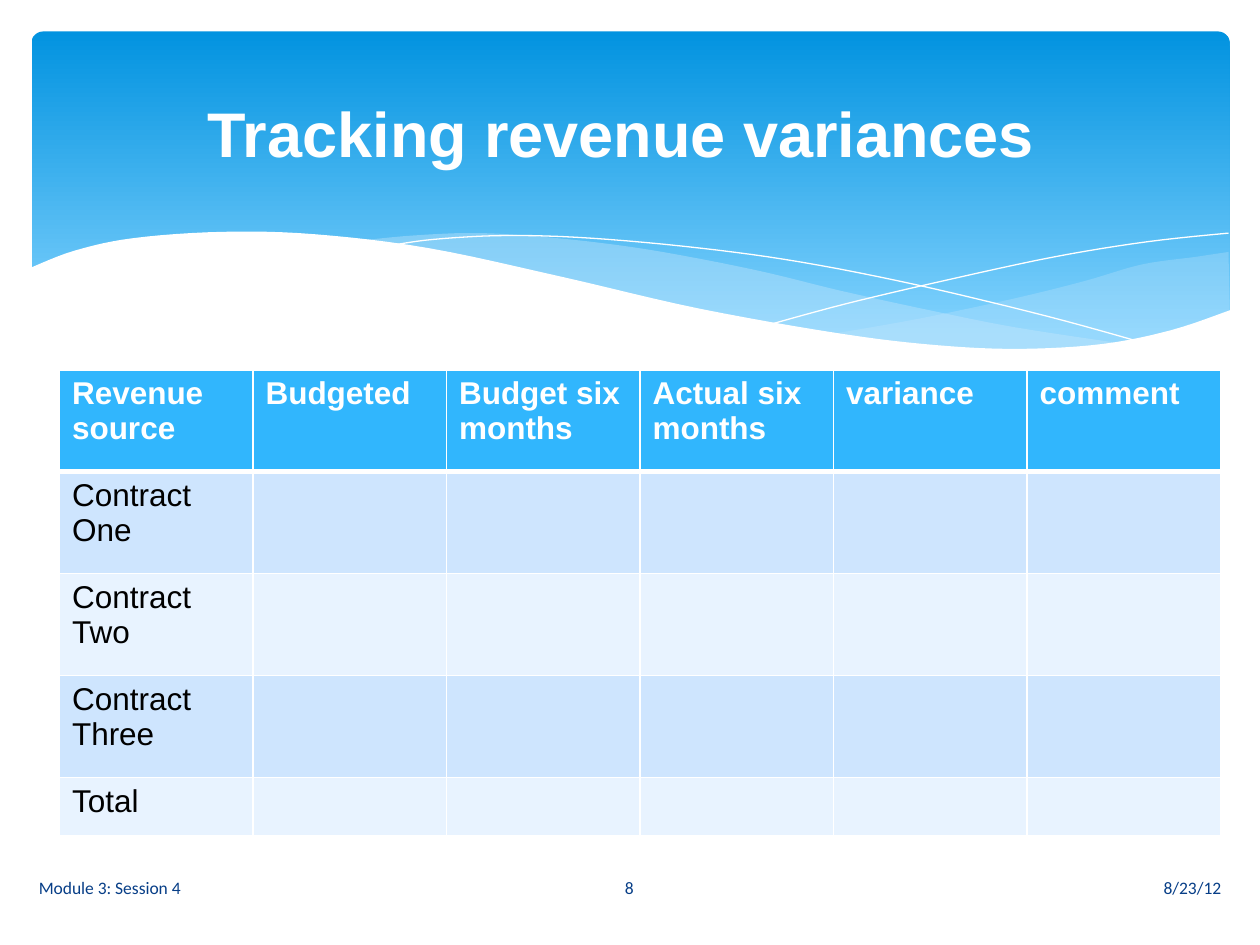
from dataclasses import dataclass
from typing import NamedTuple, Optional

from lxml.etree import SubElement
from pptx import Presentation
from pptx.dml.color import RGBColor
from pptx.enum.shapes import MSO_SHAPE
from pptx.enum.text import MSO_ANCHOR, MSO_AUTO_SIZE, PP_ALIGN
from pptx.oxml.ns import qn
from pptx.util import Pt


@dataclass(frozen=True)
class Theme:
    white: str = "FFFFFF"
    black: str = "000000"
    banner_top: str = "0293E0"
    banner_bottom: str = "83D3FE"
    wave: str = "C6E7FC"
    header: str = "31B6FD"
    bands: tuple = ("CEE5FE", "E8F3FF")
    footer: str = "073E87"
    body_font: str = "Arial"
    footer_font: str = "Calibri"
    title_size: int = 36
    table_size: int = 18
    footer_size: int = 10


class Wave(NamedTuple):
    """Smooth edges joined end to end; without a fill it is a thin white line."""
    edges: list
    fill: Optional[str] = None
    opacity: int = 100


class Footer(NamedTuple):
    text: str
    left: float
    width: float
    alignment: PP_ALIGN


THEME = Theme()
WAVES = [
    Wave([[(702, 144), (682.6, 146.9), (652.3, 151.2), (619.9, 160.6), (579.6, 170.6),
           (524.9, 182.2), (475.9, 190.8)],
          [(475.9, 190.8), (517.7, 195.8), (562.3, 199.4), (601.2, 199.4), (640.1, 195.8),
           (673.2, 188.6), (702.7, 177.8)]], THEME.wave, 29),
    Wave([[(205.9, 137.5), (236.2, 134.6), (273.6, 133.2), (318.2, 136.1), (370.1, 142.6),
           (430.6, 154.1), (481, 166.3), (533.5, 177.8), (581, 187.2), (643, 196.6)],
          [(643, 196.6), (610.6, 199.4), (565.2, 200.2), (510.5, 195.8), (456.5, 187.9),
           (381.6, 172.8), (323.3, 159.8), (260.6, 146.2), (205.9, 137.5)]], THEME.wave, 40),
    Wave([[(222.5, 140.4), (247.7, 136.8), (288.7, 134.6), (337.7, 136.1), (400.3, 141.8),
           (457.9, 149.8), (523.4, 162.7), (598.3, 180.7), (653, 195.8)]]),
    Wave([[(441.4, 185), (483.8, 173.5), (538.6, 160.6), (601.9, 146.9), (655.2, 138.2),
           (702, 133.2)]]),
    Wave([[(16.6, 153.4), (42.5, 143.3), (76.3, 136.1), (127.4, 132.5), (180, 133.9),
           (244.8, 141.8), (321.8, 158.4), (399.6, 176.4), (481, 190.8), (535.7, 197.3),
           (582.5, 199.4), (630, 196.6), (669.6, 188.6), (703.4, 177.1)],
          [(703.4, 236.9), (16.6, 236.9)]], THEME.white),
]
TABLE_ROWS = [
    ["Revenue source", "Budgeted", "Budget six months", "Actual six months", "variance", "comment"],
    ["Contract One"],
    ["Contract Two"],
    ["Contract Three"],
    ["Total"],
]
ROW_HEIGHTS = [58.3] * 4 + [33.4]
COLUMN_WIDTH = 110.6
FOOTERS = [
    Footer("8/23/12", 406.8, 298.1, PP_ALIGN.RIGHT),
    Footer("Module 3: Session 4", 15.1, 298.1, PP_ALIGN.LEFT),
    Footer("8", 313.9, 91.4, PP_ALIGN.CENTER),
]


def rgb(color: str) -> RGBColor:
    return RGBColor.from_string(color)


def set_font(paragraph, name: str, size: float, color: str, bold: bool = False) -> None:
    font = paragraph.font
    font.name, font.size, font.bold = name, Pt(size), bold
    font.color.rgb = rgb(color)


def smooth(anchors: list, steps: int = 6) -> list:
    """Sample a Catmull-Rom curve through the anchors."""
    if len(anchors) < 3:
        return anchors
    padded = [anchors[0], *anchors, anchors[-1]]
    points = [anchors[0]]
    for a, b, c, d in zip(padded, padded[1:], padded[2:], padded[3:]):
        for step in range(1, steps + 1):
            t = step / steps
            points.append(tuple(
                0.5 * (2 * q + (r - p) * t + (2 * p - 5 * q + 4 * r - s) * t ** 2
                       + (3 * q - p - 3 * r + s) * t ** 3)
                for p, q, r, s in zip(a, b, c, d)))
    return points


def add_banner(slide) -> None:
    banner = slide.shapes.add_shape(
        MSO_SHAPE.ROUNDED_RECTANGLE, Pt(18), Pt(18), Pt(684.7), Pt(194.4))
    banner.adjustments[0] = 0.034
    banner.shadow.inherit = False
    banner.line.fill.background()
    banner.fill.gradient()
    banner.fill.gradient_angle = 270
    first, last = banner.fill.gradient_stops
    first.position, first.color.rgb = 0, rgb(THEME.banner_top)
    last.position, last.color.rgb = 0.9, rgb(THEME.banner_bottom)


def add_wave(slide, wave: Wave) -> None:
    points = [(Pt(x), Pt(y)) for edge in wave.edges for x, y in smooth(edge)]
    builder = slide.shapes.build_freeform(*points[0])
    builder.add_line_segments(points[1:], close=wave.fill is not None)
    shape = builder.convert_to_shape()
    shape.shadow.inherit = False
    if wave.fill is None:
        shape.fill.background()
        shape.line.color.rgb = rgb(THEME.white)
        shape.line.width = Pt(0)
        return
    shape.line.fill.background()
    shape.fill.solid()
    shape.fill.fore_color.rgb = rgb(wave.fill)
    if wave.opacity < 100:
        color = shape.element.spPr.find(f"{qn('a:solidFill')}/{qn('a:srgbClr')}")
        SubElement(color, qn("a:alpha"), val=str(wave.opacity * 1000))


def add_borders(cell, top: float, bottom: float) -> None:
    properties = cell._tc.get_or_add_tcPr()
    for side, width in (("L", 1), ("R", 1), ("T", top), ("B", bottom)):
        line = SubElement(properties, qn(f"a:ln{side}"), w=str(Pt(width)))
        fill = SubElement(line, qn("a:solidFill"))
        SubElement(fill, qn("a:srgbClr"), val=THEME.white)


def add_revenue_table(slide) -> None:
    column_count = len(TABLE_ROWS[0])
    table = slide.shapes.add_table(
        len(TABLE_ROWS), column_count, Pt(34), Pt(211.3),
        Pt(COLUMN_WIDTH * column_count), Pt(sum(ROW_HEIGHTS))).table
    for column in table.columns:
        column.width = Pt(COLUMN_WIDTH)
    for index, (row, height) in enumerate(zip(table.rows, ROW_HEIGHTS)):
        row.height = Pt(height)
        is_header = index == 0
        fill = THEME.header if is_header else THEME.bands[(index - 1) % 2]
        texts = TABLE_ROWS[index] + [""] * (column_count - len(TABLE_ROWS[index]))
        for cell, text in zip(row.cells, texts):
            add_borders(cell, 3 if index == 1 else 1, 3 if is_header else 1)
            cell.fill.solid()
            cell.fill.fore_color.rgb = rgb(fill)
            cell.text = text
            set_font(cell.text_frame.paragraphs[0], THEME.body_font, THEME.table_size,
                     THEME.white if is_header else THEME.black, is_header)


def format_title(slide) -> None:
    title = slide.shapes.title
    slide.shapes.element.append(title.element)  # in front of the banner
    title.left, title.top, title.width, title.height = Pt(36), Pt(26.6), Pt(648), Pt(98.6)
    frame = title.text_frame
    frame.text = "Tracking revenue variances "
    frame.auto_size = MSO_AUTO_SIZE.NONE
    frame.vertical_anchor = MSO_ANCHOR.MIDDLE
    paragraph = frame.paragraphs[0]
    paragraph.alignment = PP_ALIGN.CENTER
    set_font(paragraph, THEME.body_font, THEME.title_size, THEME.white, True)


def add_footer(slide, footer: Footer) -> None:
    frame = slide.shapes.add_textbox(
        Pt(footer.left), Pt(492.5), Pt(footer.width), Pt(28.8)).text_frame
    frame.word_wrap = True
    frame.vertical_anchor = MSO_ANCHOR.MIDDLE
    frame.text = footer.text
    paragraph = frame.paragraphs[0]
    paragraph.alignment = footer.alignment
    set_font(paragraph, THEME.footer_font, THEME.footer_size, THEME.footer)


def main() -> None:
    presentation = Presentation()
    presentation.slide_width, presentation.slide_height = Pt(720), Pt(540)
    slide = presentation.slides.add_slide(presentation.slide_layouts.get_by_name("Title Only"))
    add_banner(slide)
    for wave in WAVES:
        add_wave(slide, wave)
    add_revenue_table(slide)
    format_title(slide)
    for footer in FOOTERS:
        add_footer(slide, footer)
    presentation.save("out.pptx")


if __name__ == "__main__":
    main()
